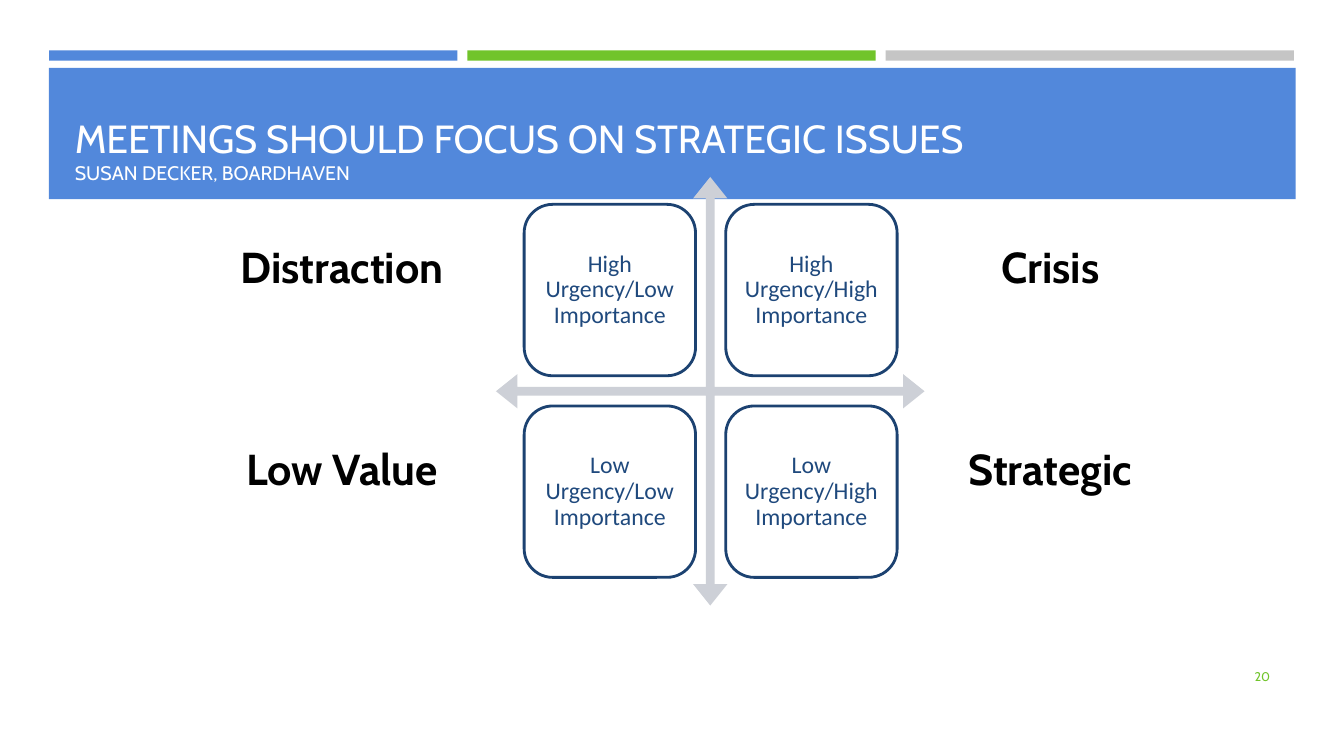
from pptx import Presentation
from pptx.dml.color import RGBColor
from pptx.enum.shapes import MSO_SHAPE
from pptx.enum.text import MSO_ANCHOR, MSO_AUTO_SIZE, PP_ALIGN
from pptx.util import Cm, Pt

RECTANGLE = MSO_SHAPE.RECTANGLE
ROUNDED = MSO_SHAPE.ROUNDED_RECTANGLE
QUAD_ARROW = MSO_SHAPE.QUAD_ARROW
TOP, MIDDLE, BOTTOM = MSO_ANCHOR.TOP, MSO_ANCHOR.MIDDLE, MSO_ANCHOR.BOTTOM
LEFT, CENTER, RIGHT = PP_ALIGN.LEFT, PP_ALIGN.CENTER, PP_ALIGN.RIGHT

THEME = {
    "blue": RGBColor(0x52, 0x88, 0xDB),
    "green": RGBColor(0x71, 0xC4, 0x2B),
    "gray": RGBColor(0xC5, 0xC5, 0xC5),
    "arrow": RGBColor(0xCD, 0xD0, 0xD7),
    "outline": RGBColor(0x1C, 0x42, 0x71),
    "card_text": RGBColor(0x1F, 0x49, 0x7D),
    "white": RGBColor(0xFF, 0xFF, 0xFF),
    "black": RGBColor(0, 0, 0),
    "title_size": Pt(28),
    "subtitle_size": Pt(14),
    "card_size": Pt(17),
    "label_size": Pt(30.9),
    "number_size": Pt(9),
    "heading_font": "Cabin",
    "card_font": "Calibri",
}


def add_block(kind, left, top, width, height, color):
    shape = slide.shapes.add_shape(kind, Cm(left), Cm(top), Cm(width), Cm(height))
    shape.shadow.inherit = False
    shape.fill.solid()
    shape.fill.fore_color.rgb = THEME[color]
    shape.line.fill.background()
    return shape


def write_text(shape, lines, color, font, anchor, alignment, bold=False, **frame_format):
    frame = shape.text_frame
    frame_format = {"word_wrap": True, "auto_size": MSO_AUTO_SIZE.NONE,
                    "vertical_anchor": anchor, **frame_format}
    for name, value in frame_format.items():
        setattr(frame, name, value)
    paragraph = frame.paragraphs[0]
    paragraph.alignment = alignment
    for index, (text, size) in enumerate(lines):
        if index:
            paragraph.add_line_break()
        run = paragraph.add_run()
        run.text = text
        font_format = {"name": THEME[font], "size": THEME[size], "bold": bold}
        for name, value in font_format.items():
            setattr(run.font, name, value)
        run.font.color.rgb = THEME[color]
    return paragraph


presentation = Presentation()
presentation.slide_width = Cm(33.87)
presentation.slide_height = Cm(19.05)
slide = presentation.slides.add_slide(presentation.slide_layouts[5])

for index, color in enumerate(["blue", "green", "gray"]):
    add_block(RECTANGLE, 1.24 + index * 10.54, 1.27, 10.29, 0.26, color)
band = add_block(RECTANGLE, 1.23, 1.71, 31.42, 3.31, "blue")

title = slide.shapes.title
title_place = {"left": Cm(1.63), "top": Cm(1.96), "width": Cm(30.63), "height": Cm(2.82)}
for name, value in title_place.items():
    setattr(title, name, value)
write_text(title, [("MEETINGS SHOULD FOCUS ON STRATEGIC ISSUES", "title_size"),
                   ("SUSAN DECKER, BOARDHAVEN", "subtitle_size")],
           "white", "heading_font", BOTTOM, LEFT)
band.element.addnext(title.element)

number = slide.shapes.add_textbox(Cm(29.34), Cm(16.54), Cm(2.92), Cm(1.02))
write_text(number, [("20", "number_size")], "green", "heading_font", MIDDLE, RIGHT)

arrows = add_block(QUAD_ARROW, 12.5, 4.46, 10.8, 10.8, "arrow")
for index, value in enumerate([0.02, 0.04, 0.05]):
    arrows.adjustments[index] = value

quadrants = [
    ("High Urgency/Low Importance", "Distraction"),
    ("High Urgency/High Importance", "Crisis"),
    ("Low Urgency/Low Importance", "Low Value"),
    ("Low Urgency/High Importance", "Strategic"),
]
card_insets = dict.fromkeys(
    ["margin_left", "margin_right", "margin_top", "margin_bottom"], Cm(0.18))
for index, (description, name) in enumerate(quadrants):
    row, column = divmod(index, 2)
    card = add_block(ROUNDED, 13.21 + column * 5.08, 5.15 + row * 5.08, 4.32, 4.32, "white")
    card.line.color.rgb = THEME["outline"]
    card.line.width = Pt(2)
    paragraph = write_text(card, [(description, "card_size")], "card_text", "card_font",
                           MIDDLE, CENTER, **card_insets)
    paragraph.line_spacing = 0.9

    label = slide.shapes.add_textbox(Cm(5.47 + column * 17.85), Cm(5.94 + row * 5.08),
                                     Cm(6.3), Cm(1.57))
    write_text(label, [(name, "label_size")], "black", "heading_font", TOP, CENTER, bold=True)

presentation.save("out.pptx")
